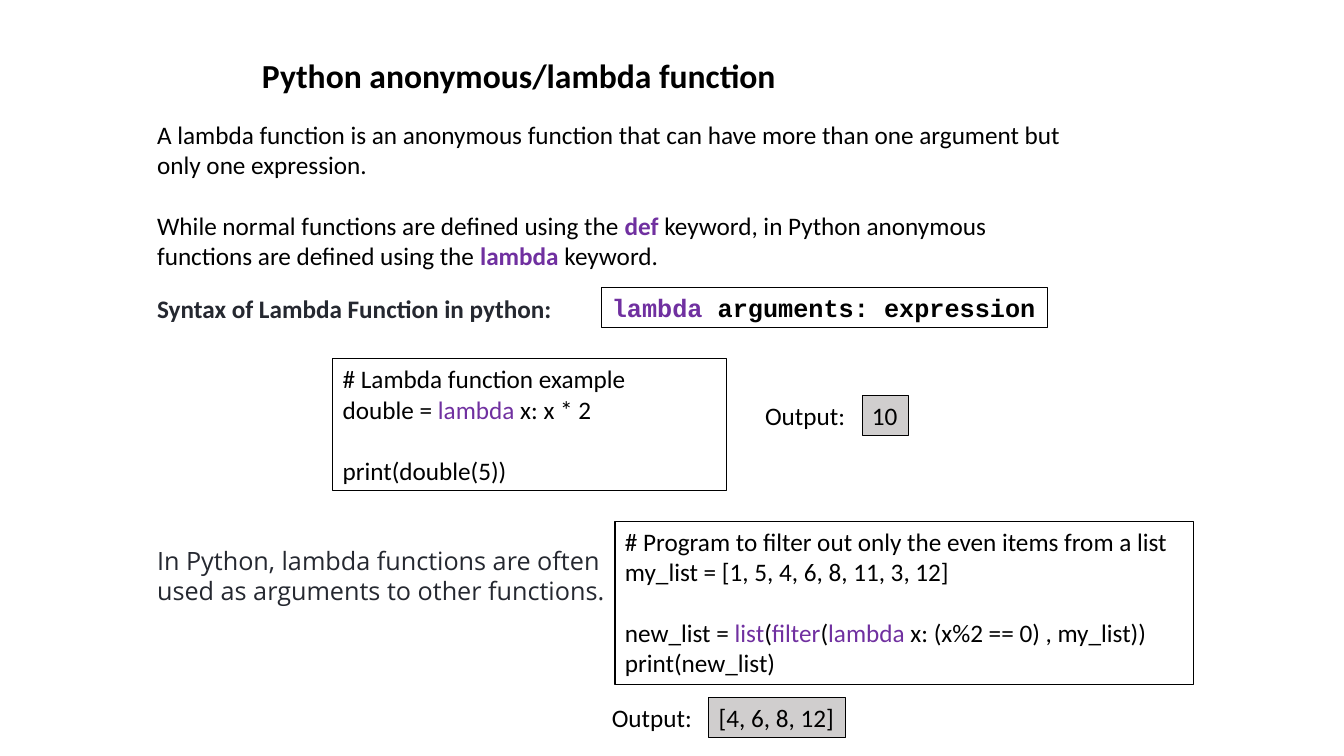
"""Build a slide that introduces Python lambda functions."""
from pptx import Presentation
from pptx import util as u
from pptx.dml.color import RGBColor
from pptx.enum import shapes, text

PX = u.Inches(1) // 100
SLIDE = (1333, 750)
COLORS = {"ink": "000000", "slate": "252830", "keyword": "7030A0", "result": "D0CECE"}
BODY = {"font": "Calibri", "size": 18, "bold": False, "color": "ink", "wrap": True}
LABEL = BODY | {"wrap": False}
CODE = BODY | {"border": True}
RESULT = LABEL | {"border": True, "fill": "result"}
BLANK_LINE = 22

TITLE = ["Python anonymous/lambda function"]
INTRO = [
    "A lambda function is an anonymous function that can have more than one argument "
    "but only one expression.",
    None,
    ["While normal functions are defined using the ", ("def",),
     " keyword, in Python anonymous functions are defined using the ", ("lambda",),
     " keyword."],
]
SYNTAX = [[("lambda",), " arguments: expression"]]
DOUBLE = [
    "# Lambda function example",
    ["double = ", ("lambda",), " x: x * 2"],
    None,
    "print(double(5))",
]
FILTER = [
    "# Program to filter out only the even items from a list",
    "my_list = [1, 5, 4, 6, 8, 11, 3, 12]",
    None,
    ["new_list = ", ("list",), "(", ("filter",), "(", ("lambda",),
     " x: (x%2 == 0) , my_list))"],
    "print(new_list)",
]
USAGE = ["In Python, lambda functions are often used as arguments to other functions."]

BOXES = [
    ((250, 50, 535, 50), TITLE, LABEL | {"size": 24, "bold": True}),
    ((146, 113, 928, 162), INTRO, BODY | {"bold_keywords": True}),
    ((146, 286, 484, 40), ["Syntax of Lambda Function in python:"],
     BODY | {"bold": True, "color": "slate"}),
    ((330, 356, 391, 131), DOUBLE, CODE),
    ((597, 285, 442, 40), SYNTAX,
     CODE | {"font": "Courier New", "bold": True, "wrap": False}),
    ((146, 536, 484, 71), USAGE, BODY | {"font": "Open Sans", "color": "slate"}),
    ((610, 517, 574, 162), FILTER, CODE),
]
OUTPUTS = [((597, 692), 136, "[4, 6, 8, 12]"), ((749, 392), 46, "10")]
LABEL_WIDTH, OUTPUT_HEIGHT = 106, 40


def rgb(name):
    return RGBColor.from_string(COLORS[name])


def write_paragraph(para, content, style):
    para.alignment = text.PP_ALIGN.LEFT
    para.font.name = style["font"]
    para.font.size = u.Pt(style["size"])
    mixed = style.get("bold_keywords", False)
    if not mixed:
        para.font.bold = style["bold"]
    spans = [content] if isinstance(content, str) else content
    if len(spans) == 1:
        para.font.color.rgb = rgb(style["color"])
    for span in spans:
        keyword = isinstance(span, tuple)
        run = para.add_run()
        run.text = span[0] if keyword else span
        if len(spans) > 1:
            run.font.color.rgb = rgb("keyword" if keyword else style["color"])
        if mixed and keyword:
            run.font.bold = True


def add_box(page, place, lines, style):
    area = [length * PX for length in place]
    if style.get("border"):
        box = page.shapes.add_shape(shapes.MSO_SHAPE.RECTANGLE, *area)
        box.shadow.inherit = False
        box.line.color.rgb = rgb("ink")
        box.line.width = u.Pt(0.75)
        if "fill" in style:
            box.fill.solid()
            box.fill.fore_color.rgb = rgb(style["fill"])
        else:
            box.fill.background()
    else:
        box = page.shapes.add_textbox(*area)
    frame = box.text_frame
    frame.word_wrap = style["wrap"]
    frame.auto_size = text.MSO_AUTO_SIZE.SHAPE_TO_FIT_TEXT
    frame.vertical_anchor = text.MSO_ANCHOR.TOP
    for index, content in enumerate(lines):
        if content is None:
            continue
        para = frame.add_paragraph() if index else frame.paragraphs[0]
        if index and lines[index - 1] is None:
            para.space_before = u.Pt(BLANK_LINE)
        write_paragraph(para, content, style)


def main():
    deck = Presentation()
    deck.slide_width, deck.slide_height = (length * PX for length in SLIDE)
    page = deck.slides.add_slide(deck.slide_layouts[6])
    for place, lines, style in BOXES:
        add_box(page, place, lines, style)
    for (left, top), width, result in OUTPUTS:
        add_box(page, (left + LABEL_WIDTH, top, width, OUTPUT_HEIGHT), [result], RESULT)
        add_box(page, (left, top, LABEL_WIDTH, OUTPUT_HEIGHT), ["Output:"], LABEL)
    deck.save("out.pptx")


if __name__ == "__main__":
    main()
